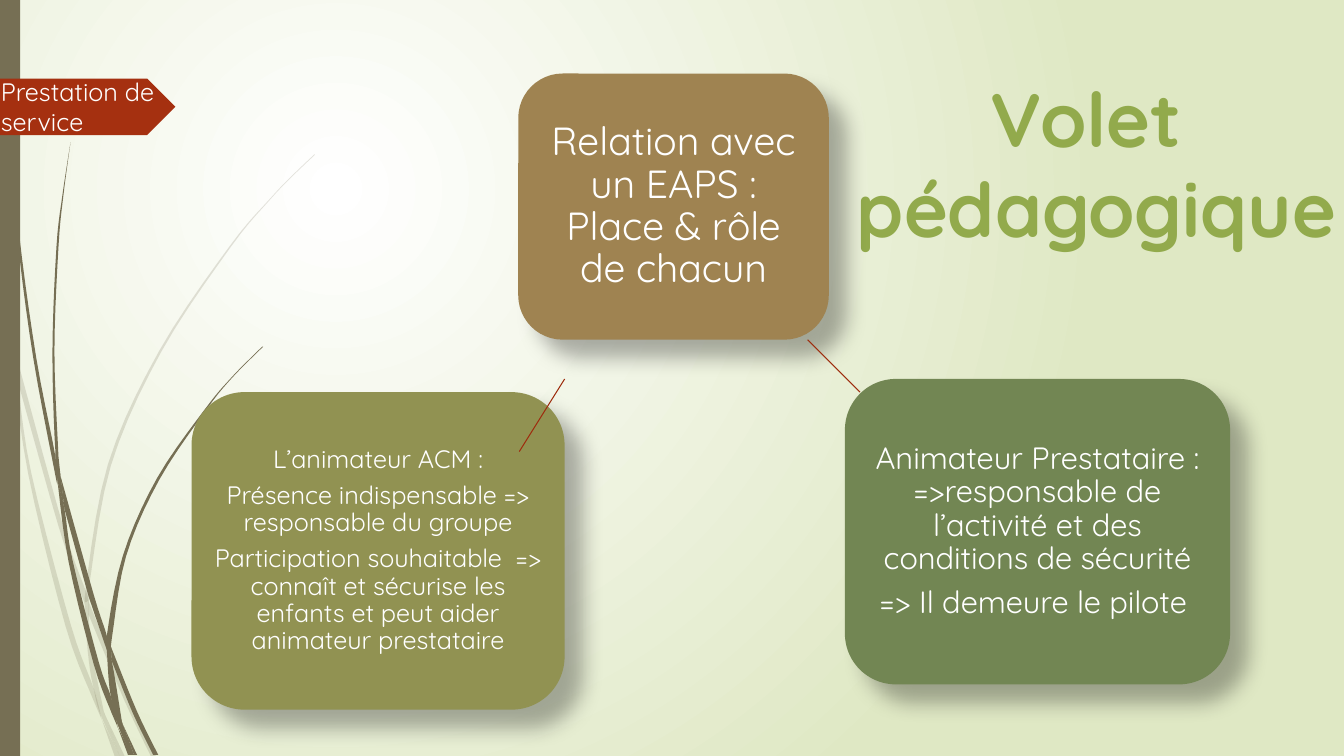
from lxml import etree
from pptx import Presentation
from pptx.dml.color import RGBColor
from pptx.enum.shapes import MSO_CONNECTOR as Connector, MSO_SHAPE as Shape
from pptx.enum.text import MSO_ANCHOR as Anchor, MSO_AUTO_SIZE as AutoSize, PP_ALIGN as Align
from pptx.oxml.ns import qn
from pptx.util import Inches, Pt

COLORS = {
    "white": "FFFFFF", "pale": "DFE8C4", "stem": "766F54", "tag": "A53010",
    "link": "9E2E0F", "title": "92AA4C", "olive": "919252", "green": "728653",
    "brown": "9F8351", "shadow": "000000",
}
FONT = "Quicksand"
CELL = Inches(1)
COLUMNS, ROWS = 13.33, 7.5


def cells(*counts):
    return [round(count * CELL) for count in counts]


def smooth(edge, steps=5):
    padded = [edge[0], *edge, edge[-1]]
    points = []
    for a, b, c, d in zip(padded, padded[1:], padded[2:], padded[3:]):
        for step in range(steps):
            t = step / steps
            points.append(cells(*(
                b[i] + (c[i] - a[i]) * t / 2
                + (2 * a[i] - 5 * b[i] + 4 * c[i] - d[i]) * t ** 2 / 2
                + (3 * b[i] - a[i] - 3 * c[i] + d[i]) * t ** 3 / 2
                for i in (0, 1))))
    return points + [cells(*edge[-1])]


presentation = Presentation()
presentation.slide_width, presentation.slide_height = cells(COLUMNS, ROWS)
slide = presentation.slides.add_slide(presentation.slide_layouts[5])
shapes = slide.shapes

background = slide.background.fill
background.gradient()
for stop, name in zip(background.gradient_stops, ("white", "pale")):
    stop.color.rgb = RGBColor.from_string(COLORS[name])
gradient = next(slide.element.iter(qn("a:gradFill")))
gradient.remove(gradient.find(qn("a:lin")))
circle = etree.SubElement(gradient, qn("a:path"), {"path": "circle"})
etree.SubElement(circle, qn("a:fillToRect"),
                 {"l": "50000", "t": "50000", "r": "100000", "b": "100000"})

faint_blades = [
    ([(0, 2.82), (0.09, 3.22), (0.11, 3.5)], [(0.1, 3.44), (0, 2.99)]),
    ([(0.14, 3.45), (0.62, 5.2), (0.85, 5.86)], [(0.84, 5.99), (0.58, 5.22), (0.17, 3.76)]),
    ([(0.88, 5.96), (0.92, 6.07), (1.27, 6.92), (1.55, 7.51)],
     [(1.5, 7.51), (1.23, 6.94), (0.88, 6.1)]),
    ([(1.05, 7.11), (1.24, 7.51)], [(1.19, 7.51), (1.05, 7.11)]),
    ([(0.11, 3.5), (0.17, 3.76), (0.31, 4.69), (0.7, 6.19), (0.93, 6.83), (1.01, 7.14)],
     [(0.92, 6.93), (0.65, 6.21), (0.28, 4.7), (0.11, 3.5)]),
    ([(0.84, 5.99), (0.87, 6.46), (0.93, 6.83), (1.05, 7.11)],
     [(1.03, 7.06), (0.91, 6.46), (0.88, 6.08)]),
    ([(3.12, 1.53), (2.89, 1.75), (2.68, 1.97), (2.28, 2.44), (1.58, 3.48), (1.07, 4.61),
      (0.85, 5.84), (0.88, 5.96)],
     [(0.88, 5.84), (1.1, 4.62), (1.6, 3.49), (2.29, 2.45), (2.68, 1.98), (2.9, 1.75), (3.12, 1.54)]),
    ([(1.01, 7.14), (1.14, 7.51)], [(1.19, 7.51), (1.01, 7.14)]),
    ([(0.85, 5.86), (0.88, 5.96), (0.88, 6.1)], [(0.88, 6.08), (0.84, 5.99)]),
    ([(0.93, 6.83), (0.99, 7.07), (1.19, 7.51)], [(1.05, 7.11), (0.96, 6.92)]),
]
solid_blades = [
    ([(0.04, 0), (0.05, 0.48), (0.08, 1.09), (0.19, 2.32), (0.36, 3.55), (0.55, 4.53), (0.57, 4.81)],
     [(0.56, 4.77), (0.33, 3.55), (0.17, 2.33), (0.07, 1.1), (0.04, 0.48), (0.03, 0)]),
    ([(0.6, 4.72), (0.93, 5.9), (1.06, 6.31), (1.06, 6.45)], [(0.88, 5.92), (0.64, 5.05)]),
    ([(1.1, 6.41), (1.13, 6.49), (1.36, 7.06), (1.57, 7.49)],
     [(1.52, 7.49), (1.32, 7.08), (1.11, 6.56)]),
    ([(0.57, 4.77), (0.64, 5.05), (0.72, 5.56), (0.98, 6.57), (1.1, 6.91), (1.17, 7.22)],
     [(1.11, 7.08), (0.93, 6.59), (0.68, 5.57), (0.57, 4.77)]),
    ([(0.7, 1.41), (0.62, 1.93), (0.56, 2.45), (0.52, 3.49), (0.55, 4.49), (0.6, 4.72)],
     [(0.58, 4.53), (0.54, 3.49), (0.58, 2.45), (0.63, 1.93), (0.7, 1.41)]),
    ([(1.22, 7.19), (1.36, 7.49)], [(1.33, 7.49), (1.22, 7.19)]),
    ([(0.55, 4.49), (0.6, 4.72), (0.64, 5.05)], [(0.57, 4.77), (0.55, 4.53)]),
    ([(2.6, 3.44), (2.31, 3.73), (2.04, 4.05), (1.56, 4.74), (1.22, 5.51), (1.06, 6.31), (1.1, 6.41)],
     [(1.11, 6.33), (1.25, 5.52), (1.58, 4.76), (2.05, 4.06), (2.31, 3.74), (2.61, 3.44)]),
    ([(1.17, 7.22), (1.27, 7.49)], [(1.31, 7.49), (1.17, 7.22)]),
    ([(1.06, 6.45), (1.1, 6.91), (1.22, 7.19)], [(1.21, 7.16), (1.11, 6.56), (1.06, 6.45)]),
    ([(1.06, 6.31), (1.1, 6.41), (1.11, 6.56)], [(1.09, 6.51), (1.06, 6.45)]),
    ([(1.1, 6.91), (1.16, 7.17), (1.3, 7.49)], [(1.33, 7.49), (1.22, 7.19), (1.1, 6.91)]),
]
for opacity, blades in ((20, faint_blades), (100, solid_blades)):
    for down, up in blades:
        outline = smooth(down) + smooth(up)
        builder = shapes.build_freeform(*outline[0])
        builder.add_line_segments(outline[1:])
        blade = builder.convert_to_shape()
        blade.shadow.inherit = False
        blade.line.fill.background()
        blade.fill.solid()
        blade.fill.fore_color.rgb = RGBColor.from_string(COLORS["stem"])
        tint = next(blade._element.spPr.iter(qn("a:srgbClr")))
        etree.SubElement(tint, qn("a:alpha"), {"val": str(opacity * 1000)})

blocks = [
    (Shape.RECTANGLE, "stem", (0, 0, 0.2, ROWS), 0, 0, []),
    (Shape.PENTAGON, "tag", (0, 0.78, 1.74, 0.56), 0, 0, []),
    (Shape.ROUNDED_RECTANGLE, "olive", (1.9, 3.89, 3.7, 3.15), 18, 0.05, [
        "L’animateur ACM :",
        "Présence indispensable => responsable du groupe",
        "Participation souhaitable  => connaît et sécurise les enfants et peut aider animateur prestataire"]),
    (Shape.ROUNDED_RECTANGLE, "green", (8.38, 3.76, 3.82, 3.03), 22, 0.06, [
        "Animateur Prestataire : =>responsable de l’activité et des conditions de sécurité",
        "=> Il demeure le pilote "]),
    (Shape.ROUNDED_RECTANGLE, "brown", (5.14, 0.73, 3.08, 2.64), 28, 0.08, [
        "Relation avec un EAPS : Place & rôle de chacun"]),
]
for kind, color, box, size, margin, lines in blocks:
    block = shapes.add_shape(kind, *cells(*box))
    block.shadow.inherit = False
    block.line.fill.background()
    block.fill.solid()
    block.fill.fore_color.rgb = RGBColor.from_string(COLORS[color])
    if not lines:
        continue
    effects = block._element.spPr.find(qn("a:effectLst"))
    shadow = etree.SubElement(effects, qn("a:outerShdw"), {
        "blurRad": str(Pt(15)), "dist": str(Pt(18)), "dir": "2700000",
        "algn": "tl", "rotWithShape": "0"})
    shade = etree.SubElement(shadow, qn("a:srgbClr"), {"val": COLORS["shadow"]})
    etree.SubElement(shade, qn("a:alpha"), {"val": "30000"})
    frame = block.text_frame
    frame.text = "\n".join(lines)
    frame.word_wrap = True
    frame.vertical_anchor = Anchor.MIDDLE
    frame.margin_left = frame.margin_right = Inches(margin)
    frame.margin_top = frame.margin_bottom = Inches(margin)
    for paragraph in frame.paragraphs:
        paragraph.alignment = Align.CENTER
        paragraph.line_spacing = 0.9
        paragraph.space_after = Pt(size * 0.35)
        font = paragraph.runs[0].font
        font.name, font.size = FONT, Pt(size)
        font.color.rgb = RGBColor.from_string(COLORS["white"])

for ends in ((8.01, 3.37, 8.53, 3.89), (5.6, 3.76, 5.15, 4.48)):
    link = shapes.add_connector(Connector.STRAIGHT, *cells(*ends))
    link.line.width = Pt(0.75)
    link.line.color.rgb = RGBColor.from_string(COLORS["link"])
    etree.SubElement(link._element.spPr, qn("a:effectLst"))

label = shapes.add_textbox(*cells(-0.09, 0.71, 2.49, 0.71))
label.text_frame.text = "Prestation de service"
label.text_frame.word_wrap = True
font = label.text_frame.paragraphs[0].runs[0].font
font.name, font.size = FONT, Pt(18)
font.color.rgb = RGBColor.from_string(COLORS["white"])

title = shapes.title
title.left, title.top, title.width, title.height = cells(8.23, 0.66, 5.29, 1.92)
frame = title.text_frame
frame.text = "Volet \npédagogique"
frame.word_wrap = False
frame.auto_size = AutoSize.SHAPE_TO_FIT_TEXT
frame.vertical_anchor = Anchor.TOP
for paragraph in frame.paragraphs:
    paragraph.alignment = Align.CENTER
    paragraph.space_before = Pt(0)
    font = paragraph.runs[0].font
    font.name, font.size, font.bold = FONT, Pt(54), True
    font.color.rgb = RGBColor.from_string(COLORS["title"])

presentation.save("out.pptx")
